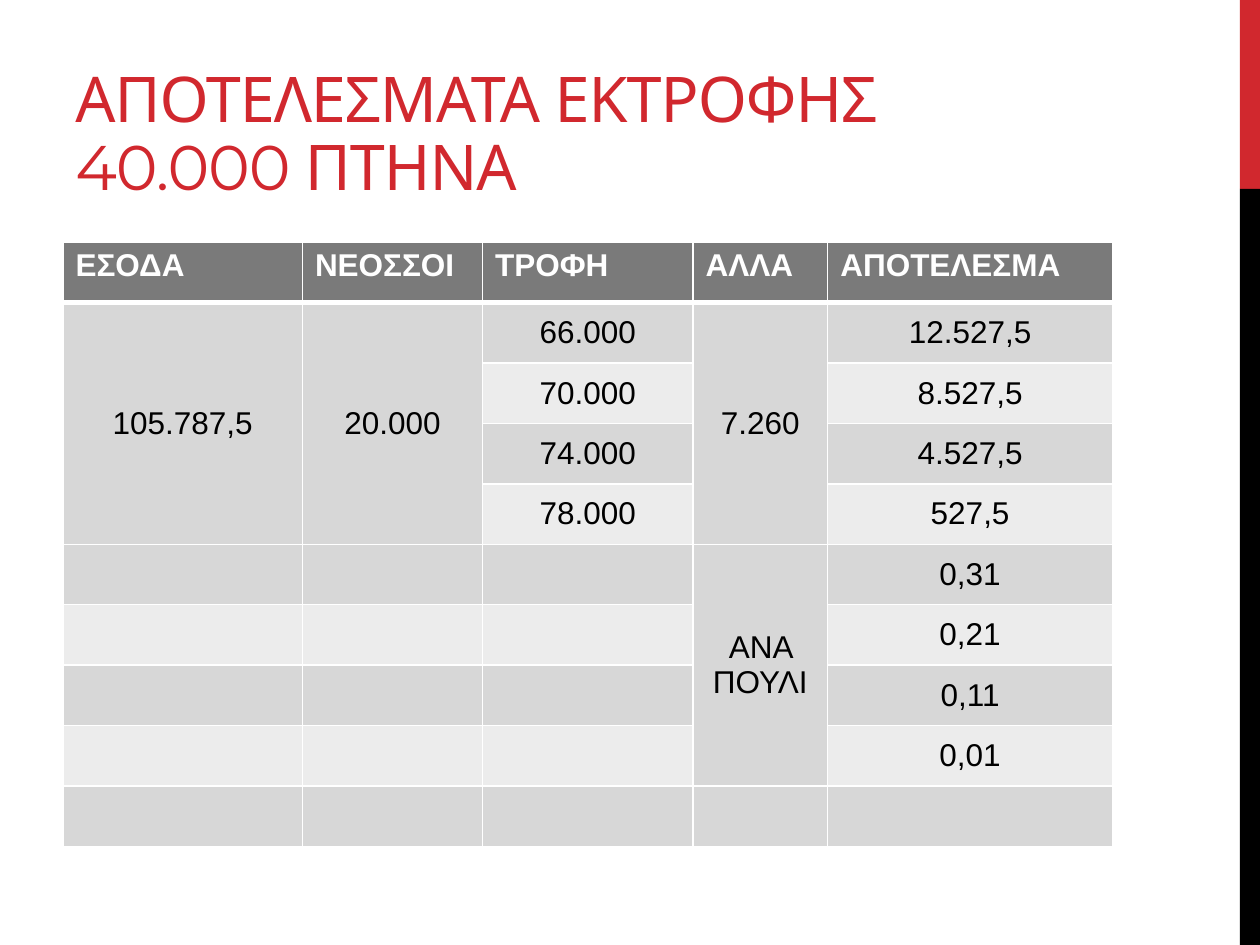
from lxml.etree import SubElement
from pptx import Presentation
from pptx.dml.color import RGBColor
from pptx.enum.shapes import MSO_SHAPE
from pptx.enum.text import MSO_ANCHOR, PP_ALIGN
from pptx.oxml.ns import qn
from pptx.util import Inches, Pt

WIDE, HIGH = 10, 7.5
RED, BLACK, WHITE = "D1282E", "000000", "FFFFFF"
HEAD, BANDS = "7A7A7A", ("D7D7D7", "ECECEC")
TITLE = "ΑΠΟΤΕΛΕΣΜΑΤΑ ΕΚΤΡΟΦΗΣ 40.000 ΠΤΗΝΑ"
ROWS = [
    ("ΕΣΟΔΑ", "ΝΕΟΣΣΟΙ", "ΤΡΟΦΗ", "ΑΛΛΑ", "ΑΠΟΤΕΛΕΣΜΑ"),
    ("105.787,5", "20.000", "66.000", "7.260", "12.527,5"),
    ("", "", "70.000", "", "8.527,5"),
    ("", "", "74.000", "", "4.527,5"),
    ("", "", "78.000", "", "527,5"),
    ("", "", "", "ΑΝΑ ΠΟΥΛΙ", "0,31"),
    ("", "", "", "", "0,21"),
    ("", "", "", "", "0,11"),
    ("", "", "", "", "0,01"),
    ("", "", "", "", ""),
]
COLS = (1.9, 1.43, 1.67, 1.07, 2.26)
TALL = 0.48
SPANS = [(1, 0), (1, 1), (1, 3), (5, 3)]
DEPTH = 4
STRIPE = 0.16
BARS = [(RED, 0, 0.2), (BLACK, 0.2, 0.8)]
LOOKS = {
    "title": {"name": "Montserrat", "size": Pt(36)},
    "head": {"name": "Arial", "size": Pt(18), "bold": True},
    "body": {"name": "Arial", "size": Pt(18), "bold": False},
}


def tint(part, code):
    if hasattr(part, "solid"):
        part.solid()
        part = part.fore_color
    part.rgb = RGBColor.from_string(code)


def style(font, look, code):
    for key, value in LOOKS[look].items():
        setattr(font, key, value)
    tint(font.color, code)


def edge(cell, sides):
    props = cell._tc.get_or_add_tcPr()
    for spot, (side, width) in enumerate(sides.items()):
        line = props.makeelement(qn("a:" + side), {"w": str(Pt(width))})
        fill = SubElement(line, qn("a:solidFill"))
        SubElement(fill, qn("a:srgbClr"), val=WHITE)
        props.insert(spot, line)


def draw_bars(slide):
    for code, top, share in BARS:
        bar = slide.shapes.add_shape(
            MSO_SHAPE.RECTANGLE, Inches(WIDE - STRIPE), Inches(top * HIGH),
            Inches(STRIPE), Inches(share * HIGH))
        bar.shadow.inherit = False
        tint(bar.fill, code)
        bar.line.fill.background()


def draw_title(slide):
    box = slide.shapes.add_textbox(
        Inches(0.5), Inches(0.17), Inches(8.36), Inches(1.5))
    frame = box.text_frame
    frame.word_wrap = True
    frame.vertical_anchor = MSO_ANCHOR.BOTTOM
    para = frame.paragraphs[0]
    para.line_spacing = 0.9
    run = para.add_run()
    run.text = TITLE
    style(run.font, "title", RED)
    run.font._element.set("spc", "-60")


def draw_table(slide):
    table = slide.shapes.add_table(
        len(ROWS), len(COLS), Inches(0.5), Inches(1.92),
        Inches(sum(COLS)), Inches(TALL * len(ROWS))).table
    for col, width in zip(table.columns, COLS):
        col.width = Inches(width)
    for r, row in enumerate(ROWS):
        table.rows[r].height = Inches(TALL)
        for c, text in enumerate(row):
            cell = table.cell(r, c)
            tint(cell.fill, BANDS[(r + 1) % 2] if r else HEAD)
            edge(cell, {"lnL": 1, "lnR": 1, "lnT": 3 if r == 1 else 1,
                        "lnB": 1 if r else 3})
            para = cell.text_frame.paragraphs[0]
            if r:
                cell.vertical_anchor = MSO_ANCHOR.MIDDLE
                para.alignment = PP_ALIGN.CENTER
            if text:
                run = para.add_run()
                run.text = text
                style(run.font, "body" if r else "head", BLACK if r else WHITE)
    for r, c in SPANS:
        table.cell(r, c).merge(table.cell(r + DEPTH - 1, c))


def main():
    deck = Presentation()
    deck.slide_width, deck.slide_height = Inches(WIDE), Inches(HIGH)
    slide = deck.slides.add_slide(deck.slide_layouts[6])
    draw_bars(slide)
    draw_title(slide)
    draw_table(slide)
    deck.save("out.pptx")


if __name__ == "__main__":
    main()
